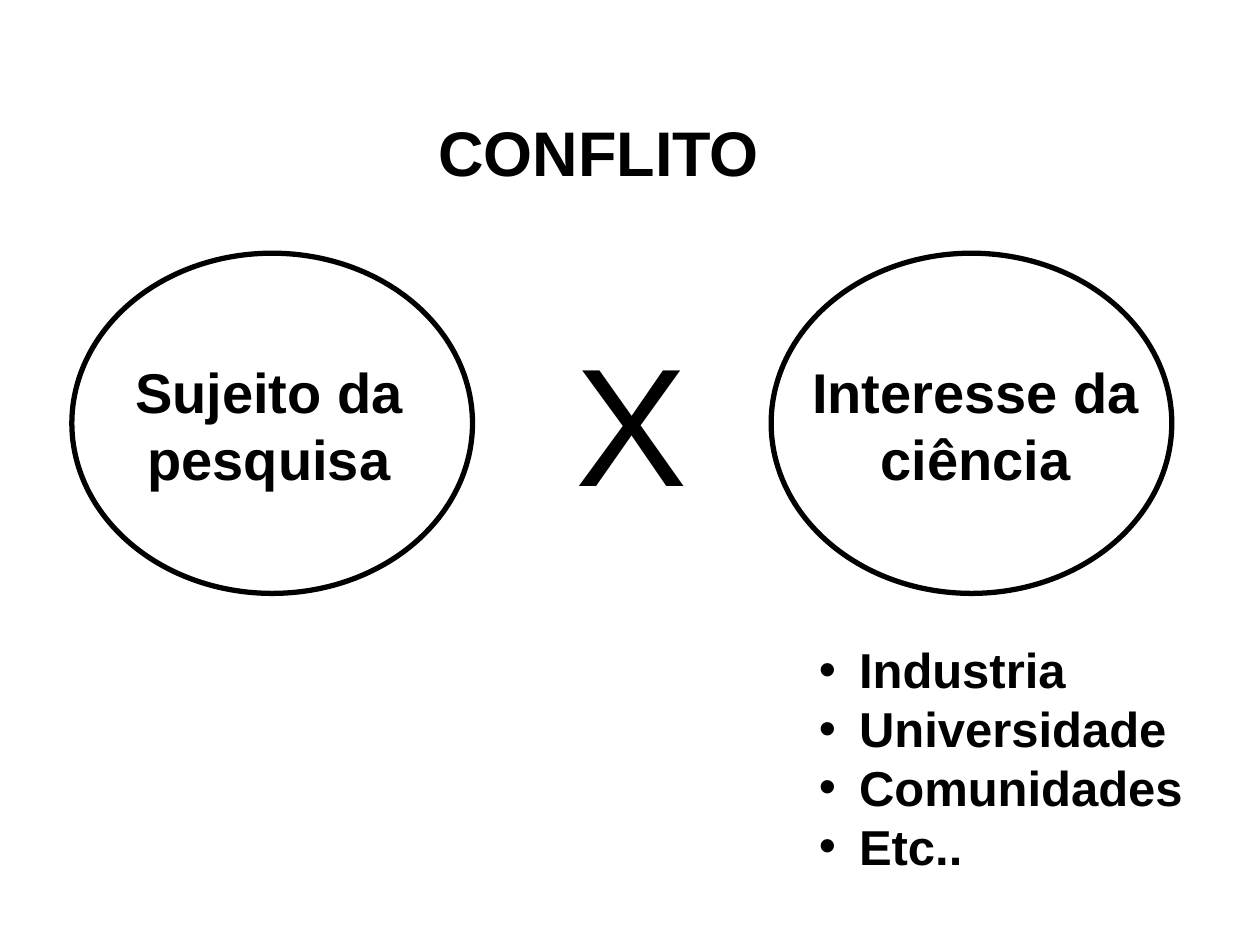
from dataclasses import dataclass

from lxml import etree
from pptx import Presentation
from pptx.dml.color import RGBColor
from pptx.enum.shapes import MSO_SHAPE
from pptx.enum.text import MSO_AUTO_SIZE, PP_ALIGN
from pptx.oxml.ns import qn
from pptx.slide import Slide
from pptx.util import Inches, Pt

OVAL = MSO_SHAPE.OVAL
FIT_SHAPE = MSO_AUTO_SIZE.SHAPE_TO_FIT_TEXT
LEFT, CENTER = PP_ALIGN.LEFT, PP_ALIGN.CENTER

COLORS = {"ink": "000000", "background": "FFFFFF"}
FONT = "Arial"
BULLET_INDENT = Inches(0.32)


@dataclass
class Label:
    text: str
    left: float
    top: float
    width: float
    height: float
    size: int
    bold: bool = True
    align: PP_ALIGN = LEFT
    wrap: bool = True
    bulleted: bool = False


OVAL_LEFTS = (0.57, 6.12)

LABELS = (
    Label("CONFLITO", 3.38, 0.85, 2.76, 0.7, 36, wrap=False),
    Label("Sujeito da pesquisa", 0.69, 2.79, 2.89, 1.17, 32, align=CENTER),
    Label("Interesse da ciência", 6.3, 2.79, 2.89, 1.17, 32, align=CENTER),
    Label("X", 4.47, 2.48, 1.09, 1.7, 96, bold=False, wrap=False),
    Label("Industria\nUniversidade\nComunidades\nEtc..",
          6.4, 5.03, 3.27, 1.97, 28, bulleted=True),
)


def add_oval(slide: Slide, left: float) -> None:
    shape = slide.shapes.add_shape(
        OVAL, Inches(left), Inches(2.01), Inches(3.18), Inches(2.7))
    shape.shadow.inherit = False
    shape.fill.background()
    shape.line.color.rgb = RGBColor.from_string(COLORS["ink"])
    shape.line.width = Pt(3)


def add_bullet(paragraph) -> None:
    properties = paragraph._p.get_or_add_pPr()
    properties.set("marL", str(BULLET_INDENT))
    properties.set("indent", str(-BULLET_INDENT))
    etree.SubElement(properties, qn("a:buFont")).set("typeface", FONT)
    etree.SubElement(properties, qn("a:buChar")).set("char", "•")


def add_label(slide: Slide, label: Label) -> None:
    shape = slide.shapes.add_textbox(
        Inches(label.left), Inches(label.top),
        Inches(label.width), Inches(label.height))
    text_frame = shape.text_frame
    text_frame.word_wrap = label.wrap
    text_frame.auto_size = FIT_SHAPE
    text_frame.text = label.text
    for paragraph in text_frame.paragraphs:
        paragraph.alignment = label.align
        if label.bulleted:
            add_bullet(paragraph)
        for run in paragraph.runs:
            run.font.name = FONT
            run.font.size = Pt(label.size)
            run.font.bold = label.bold
            run.font.color.rgb = RGBColor.from_string(COLORS["ink"])


def main() -> None:
    presentation = Presentation()
    presentation.slide_width = Inches(10)
    presentation.slide_height = Inches(7.5)
    slide = presentation.slides.add_slide(presentation.slide_layouts[6])
    background = slide.background.fill
    background.solid()
    background.fore_color.rgb = RGBColor.from_string(COLORS["background"])

    # The two opposing sides
    for left in OVAL_LEFTS:
        add_oval(slide, left)

    # Title, side names, cross and list of interests
    for label in LABELS:
        add_label(slide, label)

    presentation.save("out.pptx")


if __name__ == "__main__":
    main()
